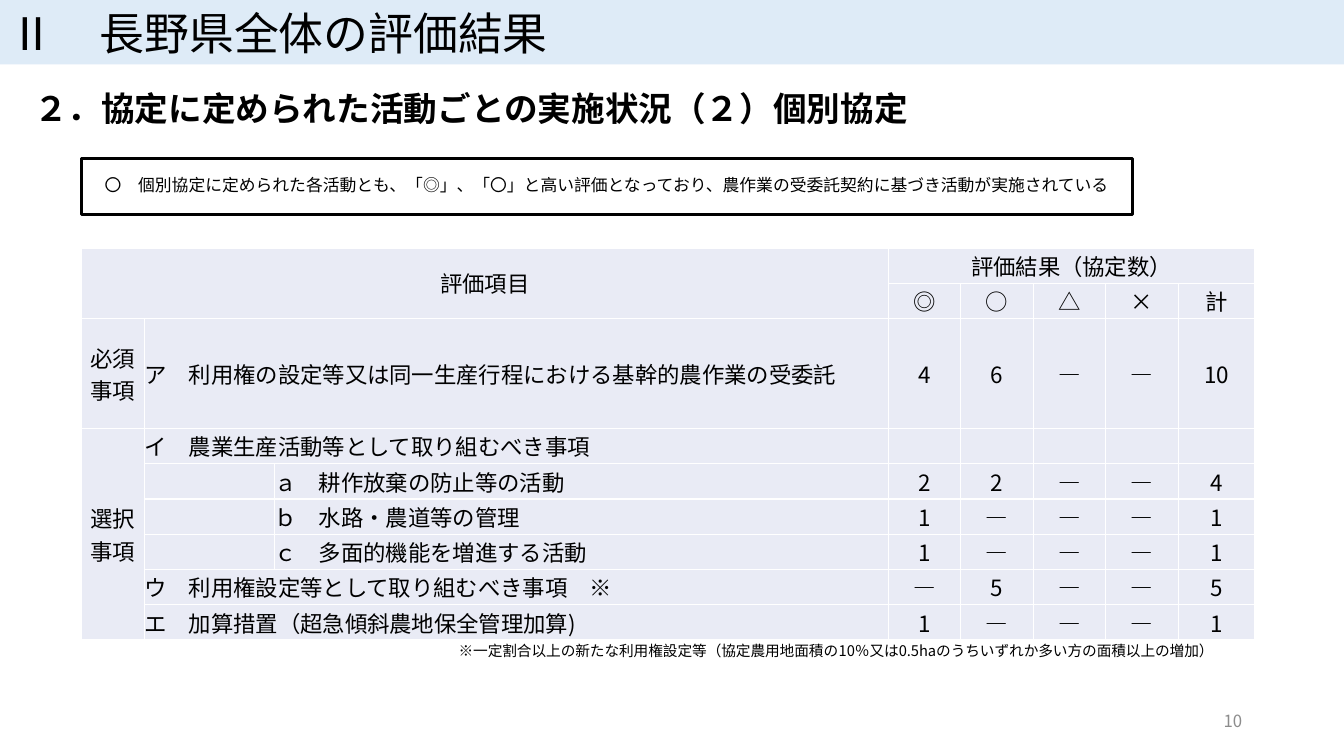
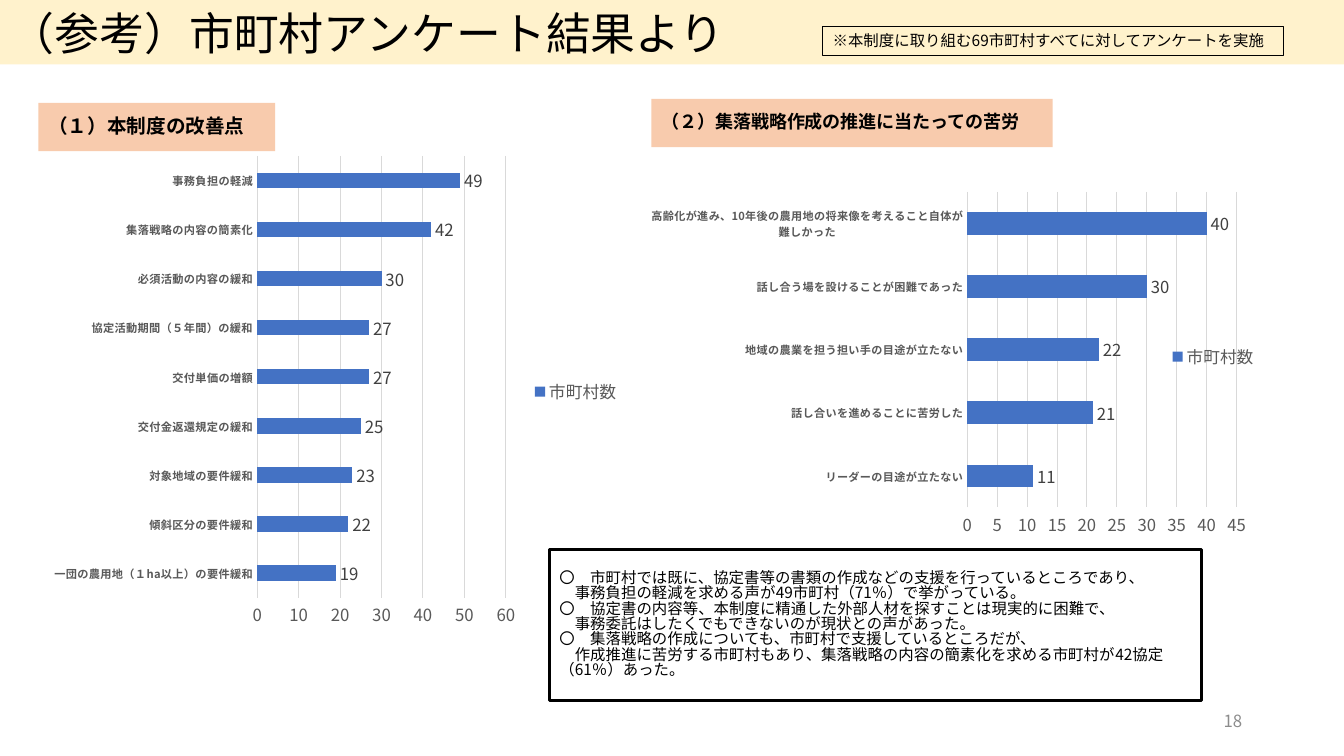
import pptx
import pptx.chart.data
import pptx.dml.color
import pptx.enum.chart
import pptx.enum.shapes
import pptx.enum.text
import pptx.oxml
import pptx.oxml.ns
import pptx.util
import lxml.etree

Inches = pptx.util.Inches
ALIGN = pptx.enum.text.PP_ALIGN
ANCHOR = pptx.enum.text.MSO_ANCHOR
FONT = "Noto Sans CJK JP"
COLORS = {
    "ink": "000000", "white": "FFFFFF", "blue": "DEEBF7", "cream": "FFF2CC",
    "peach": "F8CBAD", "cell": "E9EBF5", "bar": "4472C4", "grid": "D9D9D9",
    "axis": "595959", "label": "404040", "page": "8C8C8C",
}

MARKS = ["◎", "○", "△", "×", "計"]
WIDTHS = [0.62, 1.29, 6.09, 0.72, 0.72, 0.72, 0.72, 0.76]
ROW, TALL = 0.35, 1.09
# group and its row count, level of the item, item, results
ITEMS = [
    (("必須事項", 1), 1, "ア　利用権の設定等又は同一生産行程における基幹的農作業の受委託", "4 6 ― ― 10"),
    (("選択事項", 6), 1, "イ　農業生産活動等として取り組むべき事項", ""),
    (None, 2, "ａ　耕作放棄の防止等の活動", "2 2 ― ― 4"),
    (None, 2, "ｂ　水路・農道等の管理", "1 ― ― ― 1"),
    (None, 2, "ｃ　多面的機能を増進する活動", "1 ― ― ― 1"),
    (None, 1, "ウ　利用権設定等として取り組むべき事項　※", "― 5 ― ― 5"),
    (None, 1, "エ　加算措置（超急傾斜農地保全管理加算)", "1 ― ― ― 1"),
]

CHARTS = [
    {
        "head": "（１）本制度の改善点", "size": 14, "tag": (0.38, 1.02, 2.35, 0.48),
        "box": (0.38, 1.45, 5.87, 4.87), "plot": (0.37, 0.02, 0.42, 0.9),
        "gap": 219, "top": 60, "step": 10,
        "data": [
            ("一団の農用地（１ha以上）の要件緩和", 19),
            ("傾斜区分の要件緩和", 22),
            ("対象地域の要件緩和", 23),
            ("交付金返還規定の緩和", 25),
            ("交付単価の増額", 27),
            ("協定活動期間（５年間）の緩和", 27),
            ("必須活動の内容の緩和", 30),
            ("集落戦略の内容の簡素化", 42),
            ("事務負担の軽減", 49),
        ],
    },
    {
        "head": "（２）集落戦略作成の推進に当たっての苦労", "size": 12.9,
        "tag": (6.46, 0.98, 3.98, 0.48),
        "box": (6.46, 1.8, 6.11, 3.52), "plot": (0.51, 0.03, 0.44, 0.9),
        "gap": 182, "top": 45, "step": 5,
        "data": [
            ("リーダーの目途が立たない", 11),
            ("話し合いを進めることに苦労した", 21),
            ("地域の農業を担う担い手の目途が立たない", 22),
            ("話し合う場を設けることが困難であった", 30),
            ("高齢化が進み、10年後の農用地の将来像を考えること自体が難しかった", 40),
        ],
    },
]

VOICES = [
    "〇　市町村では既に、協定書等の書類の作成などの支援を行っているところであり、",
    "　事務負担の軽減を求める声が49市町村（71％）で挙がっている。",
    "〇　協定書の内容等、本制度に精通した外部人材を探すことは現実的に困難で、",
    "　事務委託はしたくでもできないのが現状との声があった。",
    "〇　集落戦略の作成についても、市町村で支援しているところだが、",
    "　作成推進に苦労する市町村もあり、集落戦略の内容の簡素化を求める市町村が42協定（61％）あった。",
]


def rgb(name):
    return pptx.dml.color.RGBColor.from_string(COLORS[name])


def assign(target, **values):
    for key, value in values.items():
        setattr(target, key, value)


def style(font, size, color="ink", bold=False):
    """Set the font for both Latin and East Asian text."""
    font.color.rgb = rgb(color)
    assign(font, size=pptx.util.Pt(size), bold=bold, name=FONT)
    props = font._rPr
    lxml.etree.SubElement(props, pptx.oxml.ns.qn("a:ea"), typeface=FONT)


def write(frame, lines, size, color="ink", bold=False, **para):
    for i, line in enumerate(lines):
        p = frame.add_paragraph() if i else frame.paragraphs[0]
        assign(p, **{"alignment": ALIGN.LEFT, **para})
        run = p.add_run()
        run.text = line
        style(run.font, size, color, bold)


def add_box(slide, box, lines, size, fill=None, line=None,
            anchor=ANCHOR.MIDDLE, **text):
    """Add a rectangle with text, or a text box if it has no fill or line."""
    place = [Inches(v) for v in box]
    if fill or line:
        shape = slide.shapes.add_shape(
            pptx.enum.shapes.MSO_SHAPE.RECTANGLE, *place)
        shape.shadow.inherit = False
        if fill:
            shape.fill.solid()
            shape.fill.fore_color.rgb = rgb(fill)
        else:
            shape.fill.background()
        if line:
            shape.line.color.rgb = rgb("ink")
            shape.line.width = pptx.util.Pt(line)
        else:
            shape.line.fill.background()
    else:
        shape = slide.shapes.add_textbox(*place)
    assign(shape.text_frame, word_wrap=True, vertical_anchor=anchor)
    write(shape.text_frame, lines, size, **text)


def add_page(deck, title, fill, number):
    """Add a slide with its title band and page number."""
    slide = deck.slides.add_slide(deck.slide_layouts[6])
    add_box(slide, (0, 0, 13.33, 0.64), [title], 32, fill=fill)
    add_box(slide, (9.42, 6.95, 3, 0.4), [number], 12, color="page",
            alignment=ALIGN.RIGHT)
    return slide


def paint(cell):
    """Give a cell its white borders, fill and zero margins."""
    props = cell._tc.get_or_add_tcPr()
    for side in ("lnL", "lnR", "lnT", "lnB"):
        edge = lxml.etree.SubElement(
            props, pptx.oxml.ns.qn("a:" + side), w=str(pptx.util.Pt(1)))
        solid = lxml.etree.SubElement(edge, pptx.oxml.ns.qn("a:solidFill"))
        lxml.etree.SubElement(
            solid, pptx.oxml.ns.qn("a:srgbClr"), val=COLORS["white"])
    cell.fill.solid()
    cell.fill.fore_color.rgb = rgb("cell")
    assign(cell, margin_left=0, margin_right=0, margin_top=0,
           margin_bottom=0, vertical_anchor=ANCHOR.MIDDLE)


def add_grid(slide):
    heights = [ROW, ROW, TALL] + [ROW] * (len(ITEMS) - 1)
    grid = slide.shapes.add_table(
        len(heights), len(WIDTHS), Inches(0.81), Inches(2.46),
        Inches(sum(WIDTHS)), Inches(sum(heights))).table
    assign(grid, first_row=False, horz_banding=False)
    for col, width in zip(grid.columns, WIDTHS):
        col.width = Inches(width)
    for row, height in zip(grid.rows, heights):
        row.height = Inches(height)
        for cell in row.cells:
            paint(cell)

    def fill(row, col, text, rows=1, cols=1, alignment=ALIGN.CENTER):
        cell = grid.cell(row, col)
        if rows * cols > 1:
            cell.merge(grid.cell(row + rows - 1, col + cols - 1))
        write(cell.text_frame, [text], 16, alignment=alignment)
        return cell

    fill(0, 0, "評価項目", 2, 3)
    fill(0, 3, "評価結果（協定数）", 1, 5)
    for col, mark in enumerate(MARKS, 3):
        fill(1, col, mark)
    for row, (group, level, item, marks) in enumerate(ITEMS, 2):
        if group:
            cell = fill(row, 0, group[0], group[1])
            cell._tc.get_or_add_tcPr().set("vert", "eaVert")
        fill(row, level, item, 1, 3 - level, ALIGN.LEFT)
        for col, mark in enumerate(marks.split(), 3):
            fill(row, col, mark)


def set_plot(chart, plot):
    """Fix the inner plot area, given as shares of the chart."""
    area = chart._chartSpace.chart.plotArea
    for old in area.findall(pptx.oxml.ns.qn("c:layout")):
        area.remove(old)
    layout = lxml.etree.Element(pptx.oxml.ns.qn("c:layout"))
    manual = lxml.etree.SubElement(
        layout, pptx.oxml.ns.qn("c:manualLayout"))
    parts = [("layoutTarget", "inner"), ("xMode", "edge"), ("yMode", "edge")]
    for tag, value in parts + list(zip("xywh", plot)):
        lxml.etree.SubElement(
            manual, pptx.oxml.ns.qn("c:" + tag), val=str(value))
    area.insert(0, layout)


def add_bars(slide, info):
    kinds = pptx.enum.chart
    data = pptx.chart.data.CategoryChartData()
    data.categories, values = zip(*info["data"])
    data.add_series("市町村数", values)
    chart = slide.shapes.add_chart(
        kinds.XL_CHART_TYPE.BAR_CLUSTERED,
        *[Inches(v) for v in info["box"]], data).chart
    assign(chart, has_title=False, has_legend=True)
    style(chart.font, 10)
    assign(chart.legend, include_in_layout=False,
           position=kinds.XL_LEGEND_POSITION.RIGHT)
    style(chart.legend.font, 12, "axis")

    names, scale = chart.category_axis, chart.value_axis
    for axis in (names, scale):
        assign(axis, major_tick_mark=kinds.XL_TICK_MARK.NONE,
               minor_tick_mark=kinds.XL_TICK_MARK.NONE)
    style(names.tick_labels.font, 8, "axis", True)
    style(scale.tick_labels.font, 12, "axis")
    assign(scale, minimum_scale=0, maximum_scale=info["top"],
           major_unit=info["step"], has_major_gridlines=True)
    scale.format.line.fill.background()
    for line in (names.format.line, scale.major_gridlines.format.line):
        line.color.rgb = rgb("grid")
        line.width = pptx.util.Pt(0.75)

    plot = chart.plots[0]
    assign(plot, gap_width=info["gap"], vary_by_categories=False,
           has_data_labels=True)
    assign(plot.data_labels, show_value=True,
           position=kinds.XL_LABEL_POSITION.OUTSIDE_END)
    style(plot.data_labels.font, 12, "label")
    bars = plot.series[0].format.fill
    bars.solid()
    bars.fore_color.rgb = rgb("bar")
    set_plot(chart, info["plot"])


def main():
    deck = pptx.Presentation()
    assign(deck, slide_width=Inches(13.33), slide_height=Inches(7.5))

    slide = add_page(deck, "Ⅱ　長野県全体の評価結果", "blue", "10")
    add_box(slide, (0.24, 0.86, 9.27, 0.48),
            ["２．協定に定められた活動ごとの実施状況（２）個別協定"],
            24, bold=True, line_spacing=0.9)
    add_box(slide, (0.81, 1.57, 10.42, 0.56),
            ["〇　個別協定に定められた各活動とも、「◎」、「〇」と高い評価となっており、"
             "農作業の受委託契約に基づき活動が実施されている"],
            12, line=2.25, alignment=ALIGN.CENTER, line_spacing=0.9,
            space_after=pptx.util.Pt(6))
    add_grid(slide)
    add_box(slide, (4.45, 6.35, 7.81, 0.28),
            ["※一定割合以上の新たな利用権設定等（協定農用地面積の10％又は0.5haの"
             "うちいずれか多い方の面積以上の増加）"],
            10.5, anchor=ANCHOR.TOP, line_spacing=0.8)

    slide = add_page(deck, "（参考）市町村アンケート結果より", "cream", "18")
    for info in CHARTS:
        add_bars(slide, info)
        add_box(slide, info["tag"], [info["head"]], info["size"],
                fill="peach", bold=True, line_spacing=0.9)
    add_box(slide, (8.16, 0.26, 4.57, 0.29),
            ["※本制度に取り組む69市町村すべてに対してアンケートを実施"],
            11, line=0.5)
    add_box(slide, (5.45, 5.45, 6.47, 1.5), VOICES, 11, line=2.25,
            line_spacing=0.83)
    deck.save("out.pptx")


if __name__ == "__main__":
    main()
